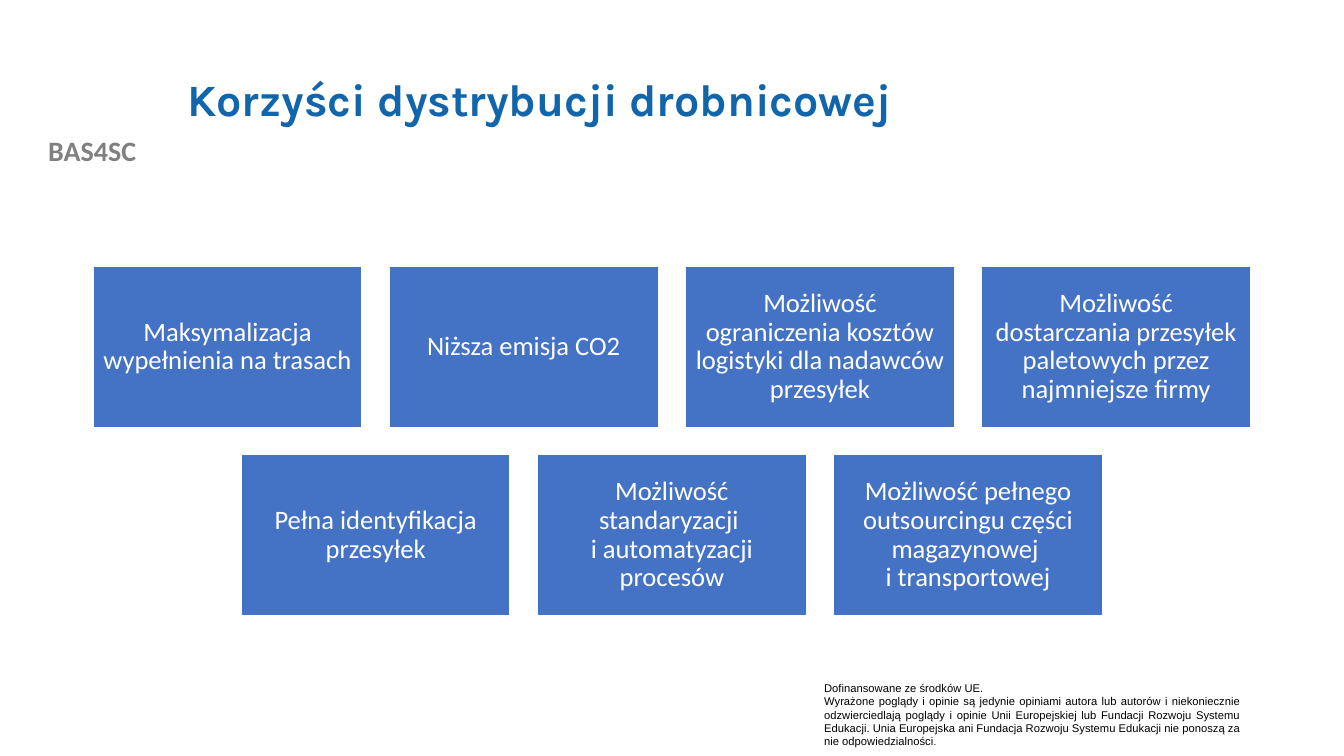
"""Build the slide on the benefits of groupage distribution."""
from pptx import Presentation
from pptx.dml.color import RGBColor
from pptx.enum.shapes import MSO_SHAPE
from pptx.enum.text import MSO_ANCHOR, PP_ALIGN
from pptx.util import Cm, Pt

BLACK = RGBColor(0x00, 0x00, 0x00)
WHITE = RGBColor(0xFF, 0xFF, 0xFF)
GREY = RGBColor(0x80, 0x80, 0x80)
NAVY = RGBColor(0x10, 0x65, 0xAB)
BLUE = RGBColor(0x44, 0x72, 0xC4)

TITLE = "Korzyści dystrybucji drobnicowej"
ROWS = [
    ["Maksymalizacja wypełnienia na trasach",
     "Niższa emisja CO2",
     "Możliwość ograniczenia kosztów logistyki dla nadawców przesyłek",
     "Możliwość dostarczania przesyłek paletowych przez najmniejsze firmy"],
    ["Pełna identyfikacja przesyłek",
     "Możliwość standaryzacji \vi automatyzacji procesów",
     "Możliwość pełnego outsourcingu części magazynowej \vi transportowej"],
]
NOTICE = [
    "Dofinansowane ze środków UE.",
    "Wyrażone poglądy i opinie są jedynie opiniami autora lub autorów "
    "i niekoniecznie odzwierciedlają poglądy i opinie Unii Europejskiej lub "
    "Fundacji Rozwoju Systemu Edukacji. Unia Europejska ani Fundacja Rozwoju "
    "Systemu Edukacji nie ponoszą za nie odpowiedzialności",
]


def write(frame, *lines, size, color, font="Calibri", bold=False,
          align=PP_ALIGN.LEFT, anchor=MSO_ANCHOR.TOP, space=1.0):
    """Fill a text frame with one paragraph per line."""
    frame.word_wrap = True
    frame.vertical_anchor = anchor
    for i, line in enumerate(lines):
        para = frame.add_paragraph() if i else frame.paragraphs[0]
        para.text = line
        para.alignment = align
        para.line_spacing = space
        for run in para.runs:
            run.font.name = font
            run.font.size = Pt(size)
            run.font.bold = bold
            run.font.color.rgb = color


def label(slide, box, *lines, **style):
    """Add a text box and return its frame."""
    frame = slide.shapes.add_textbox(*map(Cm, box)).text_frame
    write(frame, *lines, **style)
    return frame


def footer(slide, box):
    """Add the funding notice, which ends in a smaller full stop."""
    frame = label(slide, box, *NOTICE, size=8, color=BLACK, font="Arial",
                  align=PP_ALIGN.JUSTIFY)
    stop = frame.paragraphs[-1].add_run()
    stop.text = "."
    stop.font.name = "Arial"
    stop.font.size = Pt(7)
    stop.font.color.rgb = BLACK


def tile(slide, box, text):
    """Add one blue benefit tile."""
    shape = slide.shapes.add_shape(MSO_SHAPE.RECTANGLE, *map(Cm, box))
    shape.shadow.inherit = False
    shape.fill.solid()
    shape.fill.fore_color.rgb = BLUE
    shape.line.color.rgb = WHITE
    shape.line.width = Pt(1)
    frame = shape.text_frame
    frame.margin_left = frame.margin_right = Cm(0.2)
    frame.margin_top = frame.margin_bottom = Cm(0.2)
    write(frame, text, size=19, color=WHITE, align=PP_ALIGN.CENTER,
          anchor=MSO_ANCHOR.MIDDLE, space=0.9)


def grid(slide, box, gap=0.68):
    """Place the rows of tiles, each centred in the box."""
    left, top, width, height = box
    most = max(map(len, ROWS))
    wide = (width - gap * (most - 1)) / most
    high = (height - gap * (len(ROWS) - 1)) / len(ROWS)
    for i, row in enumerate(ROWS):
        start = left + (most - len(row)) * (wide + gap) / 2
        for j, text in enumerate(row):
            tile(slide, (start + j * (wide + gap), top + i * (high + gap),
                         wide, high), text)


def main():
    """Build and save the slide."""
    deck = Presentation()
    deck.slide_width, deck.slide_height = Cm(33.87), Cm(19.05)
    slide = deck.slides.add_slide(deck.slide_layouts[6])
    label(slide, (0, 3.25, 4.65, 1.12), "BAS4SC", size=20, color=GREY,
          bold=True, align=PP_ALIGN.CENTER)
    footer(slide, (20.52, 17.04, 11, 1.96))
    label(slide, (4.47, 1.02, 27.08, 3.1), TITLE, size=32, color=NAVY,
          font="Karla", bold=True, anchor=MSO_ANCHOR.MIDDLE, space=0.9)
    grid(slide, (2.34, 6.71, 29.18, 8.81))
    deck.save("out.pptx")


if __name__ == "__main__":
    main()
